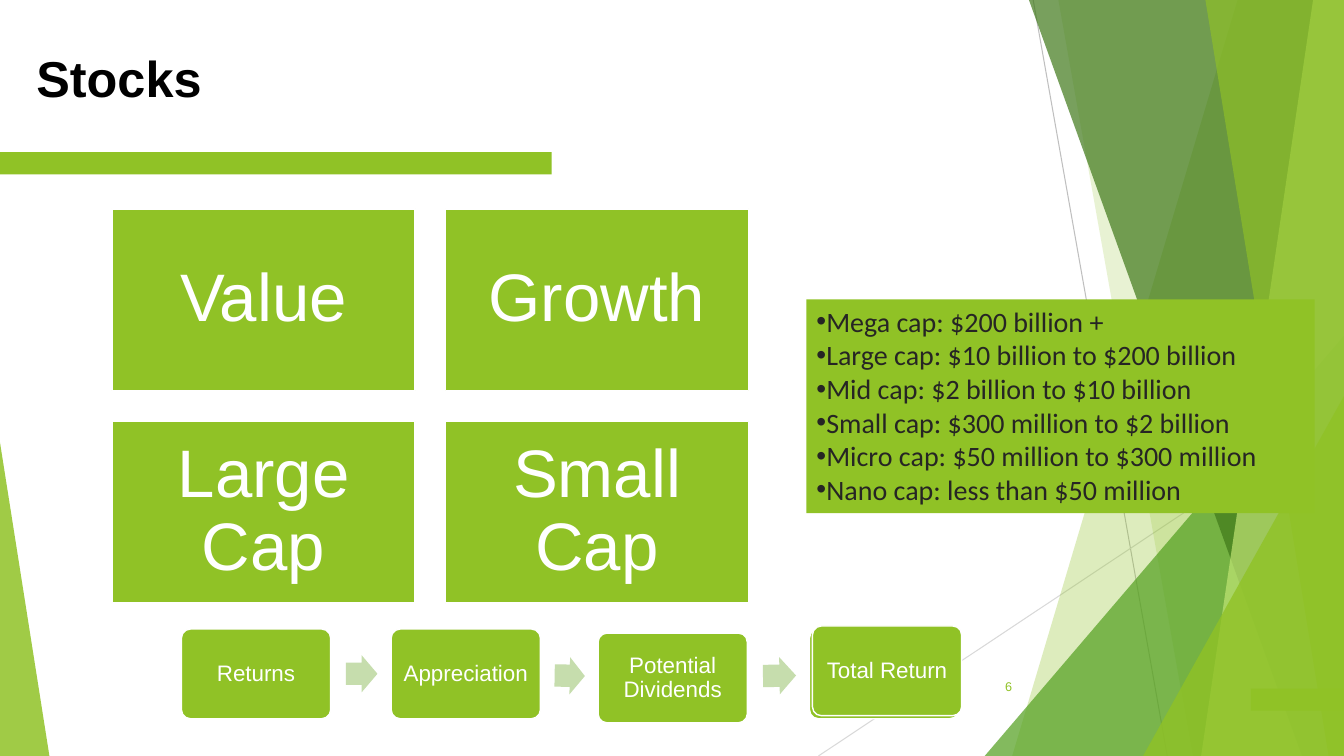
import dataclasses
import typing

import lxml.etree
import pptx
import pptx.dml.color
import pptx.enum.shapes
import pptx.enum.text
import pptx.oxml.ns
import pptx.util

Pt = pptx.util.Pt
Kind = pptx.enum.shapes.MSO_SHAPE
Align = pptx.enum.text.PP_ALIGN
Anchor = pptx.enum.text.MSO_ANCHOR
qn = pptx.oxml.ns.qn

WIDTH, HEIGHT = 960, 540
GREEN, WHITE = "90C226", "FFFFFF"


@dataclasses.dataclass
class Facet:
    top_x: float
    bottom_x: float
    color: str
    opacity: int


@dataclasses.dataclass
class Wedge:
    left: float
    top: float
    width: float
    apex: float
    color: str
    opacity: int


@dataclasses.dataclass
class Step:
    left: float
    top: float
    label: str


@dataclasses.dataclass
class Arrow:
    left: float
    top: float
    width: float
    rotation: float


BACKDROP = [
    Facet(884.2, 722.9, GREEN, 30),
    Facet(756, 851.8, GREEN, 20),
    Wedge(703.4, 239.8, 256.6, 1, "54A021", 72),
    Facet(735.1, 929.5, "3F7819", 70),
    Facet(938.2, 858.2, "C0E474", 70),
    Facet(861.1, 949, GREEN, 65),
    Wedge(816.5, 283, 143.5, 1, GREEN, 80),
    Wedge(0, 316.1, 35.3, 0, GREEN, 85),
]
RAYS = [((738, 0), (833.8, 540), "BFBFBF"), ((960, 290.2), (584.6, 540), "D9D9D9")]
TILES = [["Value", "Growth"], ["Large Cap", "Small Cap"]]
STEPS = [
    Step(129.6, 449.3, "Returns"),
    Step(279.4, 449.3, "Appreciation"),
    Step(427.2, 452.2, "Potential Dividends"),
    Step(578.2, 449.3, ""),
    Step(580.3, 447.1, "Total Return"),
]
ARROWS = [
    Arrow(247, 468, 22.6, 0),
    Arrow(396.2, 469.4, 21.6, 1),
    Arrow(545, 469.4, 23.6, 359),
]
CAPS = [
    "Mega cap: $200 billion +",
    "Large cap: $10 billion to $200 billion",
    "Mid cap: $2 billion to $10 billion",
    "Small cap: $300 million to $2 billion",
    "Micro cap: $50 million to $300 million",
    "Nano cap: less than $50 million",
]


def rgb(color: str) -> pptx.dml.color.RGBColor:
    return pptx.dml.color.RGBColor.from_string(color)


def paint(shape: typing.Any, color: str, opacity: int = 100, outline: str = "") -> None:
    shape.fill.solid()
    shape.fill.fore_color.rgb = rgb(color)
    if opacity < 100:
        tint = shape.element.spPr.find(qn("a:solidFill"))[0]
        lxml.etree.SubElement(tint, qn("a:alpha")).set("val", str(opacity * 1000))
    if outline:
        shape.line.color.rgb = rgb(outline)
        shape.line.width = Pt(1)
    else:
        shape.line.fill.background()


def place(shape: typing.Any, left: float, top: float, width: float, height: float) -> None:
    shape.left, shape.top = Pt(left), Pt(top)
    shape.width, shape.height = Pt(width), Pt(height)


def write(box: typing.Any, *lines: str, size: float, color: str, font: str = "Arial",
          bold: bool = False, align: Align = Align.LEFT, anchor: Anchor = Anchor.MIDDLE,
          insets: tuple[float, float] = (7.2, 3.6), spacing: float = 1,
          bullet: str = "") -> None:
    frame = box.text_frame
    frame.word_wrap = True
    frame.auto_size = pptx.enum.text.MSO_AUTO_SIZE.NONE
    frame.vertical_anchor = anchor
    frame.margin_left = frame.margin_right = Pt(insets[0])
    frame.margin_top = frame.margin_bottom = Pt(insets[1])
    for index, line in enumerate(lines):
        para = frame.add_paragraph() if index else frame.paragraphs[0]
        para.alignment = align
        para.line_spacing = spacing
        para.space_before = para.space_after = Pt(0)
        if bullet:
            properties = para._p.get_or_add_pPr()
            properties.set("marL", "0")
            properties.set("indent", "0")
            lxml.etree.SubElement(properties, qn("a:buChar")).set("char", bullet)
        span = para.add_run()
        span.text = line
        span.font.name, span.font.size, span.font.bold = font, Pt(size), bold
        span.font.color.rgb = rgb(color)


def add_block(page: typing.Any, kind: Kind, left: float, top: float, width: float,
              height: float, color: str = GREEN, opacity: int = 100, outline: str = "",
              adjustments: typing.Sequence[float] = ()) -> typing.Any:
    block = page.shapes.add_shape(kind, Pt(left), Pt(top), Pt(width), Pt(height))
    block.shadow.inherit = False
    for index, value in enumerate(adjustments):
        block.adjustments[index] = value
    paint(block, color, opacity, outline)
    return block


def add_ray(page: typing.Any, start: tuple, end: tuple, color: str) -> None:
    ray = page.shapes.add_connector(
        pptx.enum.shapes.MSO_CONNECTOR.STRAIGHT, *map(Pt, start + end))
    ray.line.color.rgb = rgb(color)
    ray.line.width = Pt(0.75)
    lxml.etree.SubElement(ray.element.spPr, qn("a:effectLst"))


def add_facet(page: typing.Any, facet: Facet) -> None:
    builder = page.shapes.build_freeform(facet.top_x, 0, scale=float(Pt(1)))
    builder.add_line_segments([(WIDTH, 0), (WIDTH, HEIGHT), (facet.bottom_x, HEIGHT)])
    shape = builder.convert_to_shape()
    shape.shadow.inherit = False
    paint(shape, facet.color, facet.opacity)


def add_backdrop(page: typing.Any) -> None:
    for start, end, color in RAYS:
        add_ray(page, start, end, color)
    for part in BACKDROP:
        if isinstance(part, Facet):
            add_facet(page, part)
        else:
            add_block(page, Kind.ISOSCELES_TRIANGLE, part.left, part.top, part.width,
                      HEIGHT - part.top, part.color, part.opacity, adjustments=[part.apex])
    add_block(page, Kind.RECTANGLE, 893.5, 491.8, 66.5, 15.8)
    add_block(page, Kind.RECTANGLE, 0, 108.7, 394, 15.8)


def main() -> None:
    deck = pptx.Presentation()
    deck.slide_width, deck.slide_height = Pt(WIDTH), Pt(HEIGHT)
    page = deck.slides.add_slide(deck.slide_layouts[1])
    add_backdrop(page)

    title, caps = page.placeholders
    place(title, 26, 13.7, 614, 64)
    write(title, "Stocks", size=36, color="000000", bold=True, anchor=Anchor.BOTTOM,
          insets=(0, 0), spacing=0.9)

    number = page.shapes.add_textbox(Pt(676), Pt(476), Pt(54), Pt(28.8))
    write(number, "6", size=9, color=GREEN, align=Align.RIGHT)

    for row, labels in enumerate(TILES):
        for column, label in enumerate(labels):
            tile = add_block(page, Kind.RECTANGLE, 80 + 238.2 * column, 149.2 + 151.7 * row,
                             216.6, 130, outline=WHITE)
            write(tile, label, size=48, color=WHITE, align=Align.CENTER,
                  insets=(14.4, 14.4), spacing=0.9)

    for step in STEPS:
        box = add_block(page, Kind.ROUNDED_RECTANGLE, step.left, step.top, 106.6, 64.1,
                        outline=WHITE, adjustments=[0.1])
        if step.label:
            write(box, step.label, size=16, color=WHITE, align=Align.CENTER,
                  insets=(6.8, 6.8), spacing=0.9)
    for arrow in ARROWS:
        pointer = add_block(page, Kind.RIGHT_ARROW, arrow.left, arrow.top, arrow.width, 26.6,
                            "C6DDAD", adjustments=[0.6, 0.5])
        pointer.rotation = arrow.rotation

    place(caps, 576, 213.8, 363, 152.8)
    paint(caps, GREEN)
    write(caps, *CAPS, size=20, color="262524", font="Calibri", anchor=Anchor.TOP, bullet="•")
    caps.element.getparent().append(caps.element)
    deck.save("out.pptx")


if __name__ == "__main__":
    main()
